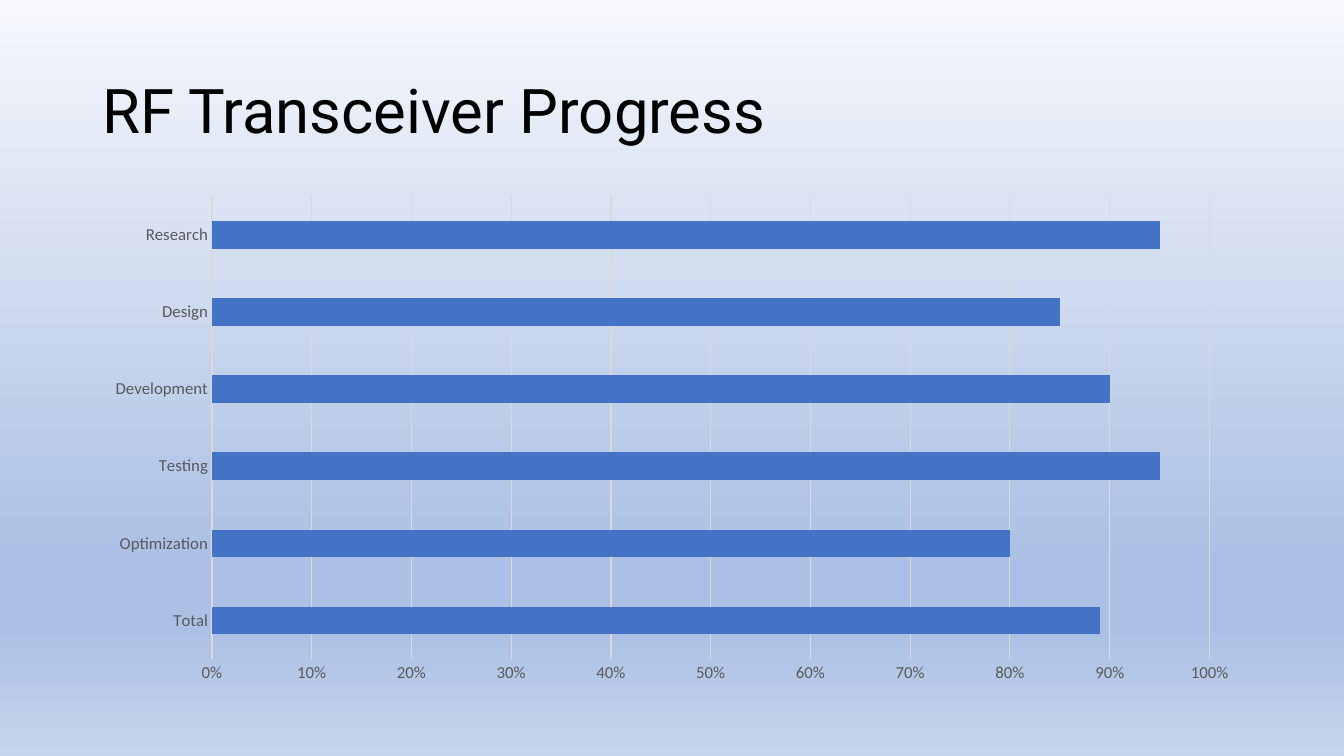
from dataclasses import dataclass

from lxml import etree
from pptx import Presentation
from pptx import util as u
from pptx.chart.data import CategoryChartData
from pptx.dml.color import RGBColor
from pptx.enum import chart as ch
from pptx.enum import text
from pptx.oxml.ns import qn


@dataclass
class Stage:
    name: str
    share: float


@dataclass
class Stop:
    place: int
    color: str


STAGES = [
    Stage("Total", 0.89),
    Stage("Optimization", 0.8),
    Stage("Testing", 0.95),
    Stage("Development", 0.9),
    Stage("Design", 0.85),
    Stage("Research", 0.95),
]
STOPS = [
    Stop(0, "F6F8FC"),
    Stop(74, "ABC0E4"),
    Stop(83, "ABC0E4"),
    Stop(100, "C7D5ED"),
]
LEFT, WIDTH = 66, 828
GRAY, RULE, BLUE = "595959", "D9D9D9", "4472C4"


def paint(target, color: str) -> None:
    """Set a solid colour on a fill or a font."""
    if hasattr(target, "solid"):
        target.solid()
        target.fore_color.rgb = RGBColor.from_string(color)
    else:
        target.color.rgb = RGBColor.from_string(color)


def set_font(font, name: str, size: float, color: str) -> None:
    font.name = name
    font.size = u.Pt(size)
    paint(font, color)


def set_line(line) -> None:
    paint(line.fill, RULE)
    line.width = u.Pt(0.75)


def add_stop(stops, stop: Stop) -> None:
    node = etree.SubElement(stops, qn("a:gs"), pos=str(stop.place * 1000))
    etree.SubElement(node, qn("a:srgbClr"), val=stop.color)


def draw_back(slide) -> None:
    fill = slide.background.fill
    fill.gradient()
    fill.gradient_angle = 270
    stops = slide.element.find(".//" + qn("a:gsLst"))
    for node in list(stops):
        stops.remove(node)
    for stop in STOPS:
        add_stop(stops, stop)


def draw_title(slide, words: str) -> None:
    box = slide.shapes.add_textbox(u.Pt(LEFT), u.Pt(28.75), u.Pt(WIDTH), u.Pt(104.4))
    frame = box.text_frame
    frame.word_wrap = True
    frame.vertical_anchor = text.MSO_ANCHOR.MIDDLE
    frame.text = words
    line = frame.paragraphs[0]
    line.line_spacing = 0.9
    set_font(line.runs[0].font, "Roboto", 44, "000000")


def draw_chart(slide) -> None:
    data = CategoryChartData(number_format="0%")
    data.categories = [stage.name for stage in STAGES]
    data.add_series("Series 1", [stage.share for stage in STAGES])
    chart = slide.shapes.add_chart(
        ch.XL_CHART_TYPE.BAR_CLUSTERED,
        u.Pt(LEFT), u.Pt(133), u.Pt(WIDTH), u.Pt(362), data,
    ).chart
    chart.has_legend = False
    chart.has_title = False
    set_font(chart.font, "Calibri", 12, "000000")

    # Bars
    plot = chart.plots[0]
    plot.gap_width = 182
    plot.vary_by_categories = False
    paint(plot.series[0].format.fill, BLUE)

    # Axes
    names, shares = chart.category_axis, chart.value_axis
    for axis in (names, shares):
        axis.major_tick_mark = ch.XL_TICK_MARK.NONE
        axis.minor_tick_mark = ch.XL_TICK_MARK.NONE
        set_font(axis.tick_labels.font, "Calibri", 12, GRAY)
    set_line(names.format.line)
    shares.format.line.fill.background()
    shares.minimum_scale, shares.maximum_scale = 0, 1
    shares.major_unit = 0.1
    shares.tick_labels.number_format = "0%"
    shares.tick_labels.number_format_is_linked = False
    shares.has_major_gridlines = True
    set_line(shares.major_gridlines.format.line)


def main() -> None:
    deck = Presentation()
    deck.slide_width, deck.slide_height = u.Pt(960), u.Pt(540)
    slide = deck.slides.add_slide(deck.slide_layouts[6])
    draw_back(slide)
    draw_title(slide, "RF Transceiver Progress")
    draw_chart(slide)
    deck.save("out.pptx")


if __name__ == "__main__":
    main()
